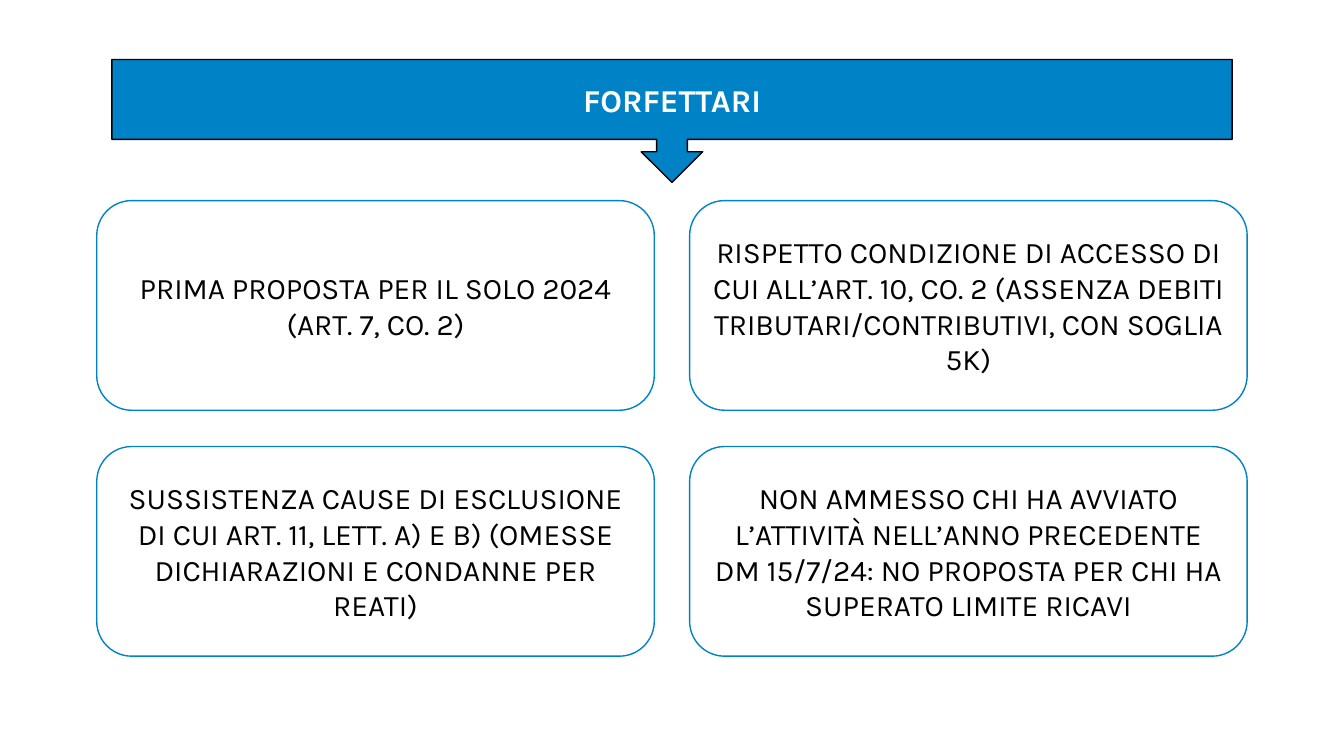
"""Builds the FORFETTARI slide: a callout banner above four rule boxes."""
from pptx import Presentation
from pptx.dml.color import RGBColor
from pptx.enum.shapes import MSO_SHAPE
from pptx.enum.text import MSO_ANCHOR, PP_ALIGN
from pptx.util import Inches, Pt

BLUE = RGBColor(0x00, 0x82, 0xC6)
WHITE = RGBColor(0xFF, 0xFF, 0xFF)
BLACK = RGBColor(0x00, 0x00, 0x00)
ROUND = MSO_SHAPE.ROUNDED_RECTANGLE
CALLOUT = MSO_SHAPE.DOWN_ARROW_CALLOUT
MIDDLE = MSO_ANCHOR.MIDDLE
CENTER = PP_ALIGN.CENTER

RULES = [
    "PRIMA PROPOSTA PER IL SOLO 2024 (ART. 7, CO. 2)",
    "RISPETTO CONDIZIONE DI ACCESSO DI CUI ALL’ART. 10, CO. 2 "
    "(ASSENZA DEBITI TRIBUTARI/CONTRIBUTIVI, CON SOGLIA 5K)",
    "SUSSISTENZA CAUSE DI ESCLUSIONE DI CUI ART. 11, LETT. A) E B) "
    "(OMESSE DICHIARAZIONI E CONDANNE PER REATI)",
    "NON AMMESSO CHI HA AVVIATO L’ATTIVITÀ NELL’ANNO PRECEDENTE\n"
    "DM 15/7/24: NO PROPOSTA PER CHI HA SUPERATO LIMITE RICAVI",
]

deck = Presentation()
deck.slide_width = Inches(13.33)
deck.slide_height = Inches(7.5)
slide = deck.slides.add_slide(deck.slide_layouts[6])


def add_box(kind, left, top, width, height, text, fill, line, color, size, bold=False):
    box = slide.shapes.add_shape(
        kind, Inches(left), Inches(top), Inches(width), Inches(height))
    box.shadow.inherit = False
    box.fill.solid()
    box.fill.fore_color.rgb = fill
    box.line.color.rgb = line
    box.line.width = Pt(1)
    frame = box.text_frame
    frame.word_wrap = True
    frame.vertical_anchor = MIDDLE
    frame.text = text
    for para in frame.paragraphs:
        para.alignment = CENTER
        for run in para.runs:
            run.font.name = "Karla"
            run.font.size = Pt(size)
            run.font.bold = bold
            run.font.color.rgb = color


for i, rule in enumerate(RULES):
    row, col = divmod(i, 2)
    add_box(ROUND, 0.96 + col * 5.88, 1.99 + row * 2.44, 5.53, 2.08,
            rule, WHITE, BLUE, BLACK, 21.3)

add_box(CALLOUT, 1.11, 0.59, 11.11, 1.22,
        "FORFETTARI", BLUE, BLACK, WHITE, 22.7, True)

deck.save("out.pptx")
